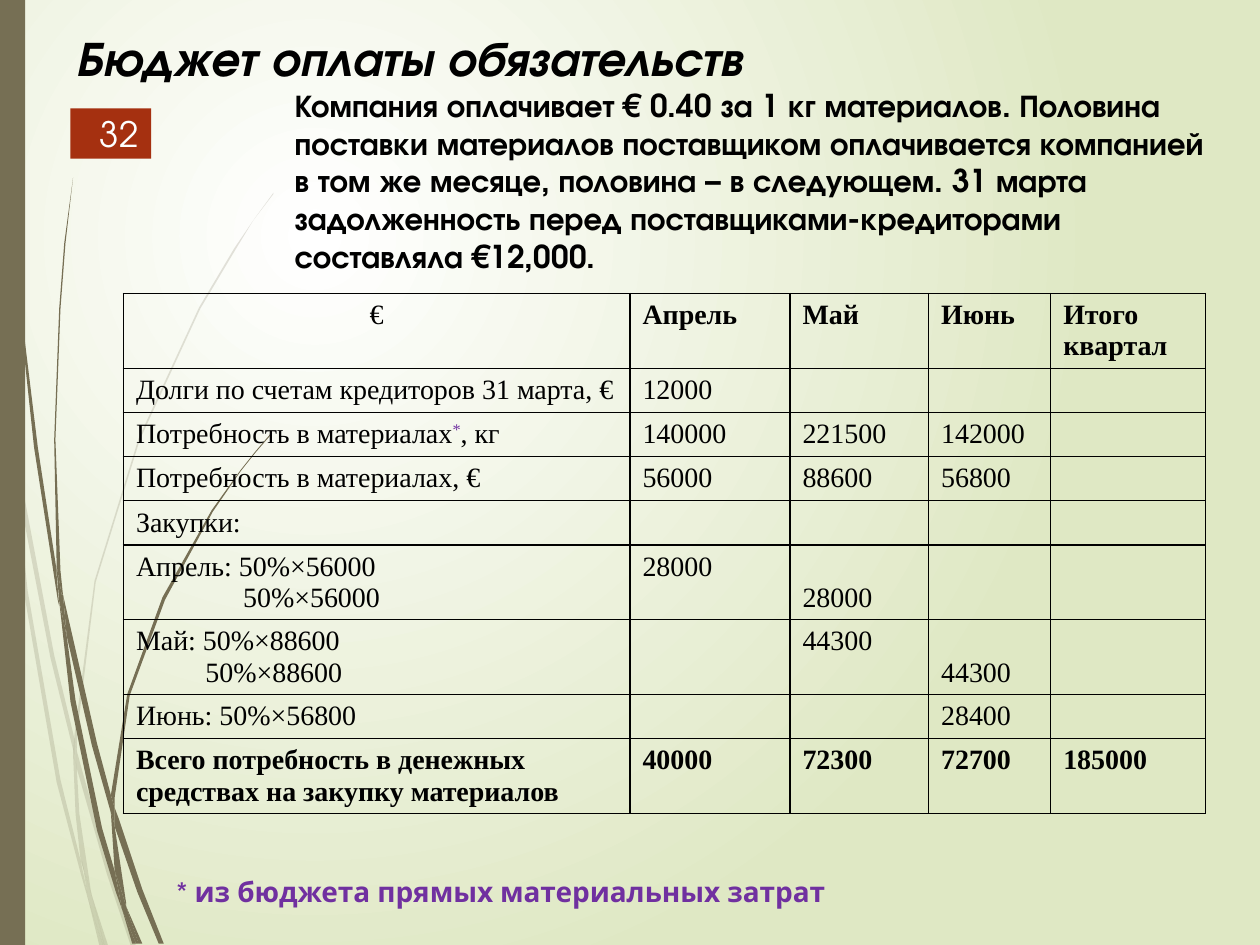
"""Build the slide with the budget of payments to suppliers."""
from lxml import etree
from pptx import Presentation
from pptx.dml.color import RGBColor
from pptx.enum.shapes import MSO_SHAPE
from pptx.enum.text import MSO_ANCHOR, PP_ALIGN
from pptx.oxml.ns import qn
from pptx.util import Inches, Pt

RECTANGLE = MSO_SHAPE.RECTANGLE
TOP, MIDDLE, BOTTOM = MSO_ANCHOR.TOP, MSO_ANCHOR.MIDDLE, MSO_ANCHOR.BOTTOM
LEFT, CENTER, RIGHT = PP_ALIGN.LEFT, PP_ALIGN.CENTER, PP_ALIGN.RIGHT
COLORS = {"white": "FFFFFF", "green": "DFE8C4", "olive": "766F54", "rust": "A53010",
          "number": "FEFFFF", "black": "000000", "purple": "7030A0"}
HEADING_FONT, TABLE_FONT, NOTE_FONT = "TeX Gyre Adventor", "Times New Roman", "Karla"

FAINT_STRANDS = [
    [(8, 350), (6, 322), (0, 282), (0, 299), (7, 344)],
    [(40, 522), (59, 599), (59, 586), (43, 520), (10, 345), (12, 376)],
    [(64, 607), (61, 596), (61, 610), (85, 694), (104, 751), (108, 751), (88, 692)],
    [(83, 751), (86, 751), (73, 711)],
    [(64, 683), (48, 619), (22, 469), (12, 376), (8, 350), (19, 470), (45, 621),
     (64, 693), (70, 714), (69, 707)],
    [(58, 599), (60, 646), (64, 683), (67, 692), (73, 711), (72, 706), (63, 646),
     (61, 610), (61, 608)],
    [(61, 584), (76, 462), (111, 349), (159, 245), (187, 198), (201, 175), (217, 154),
     (217, 153), (201, 175), (186, 197), (158, 244), (110, 348), (75, 461), (59, 584),
     (59, 586), (61, 596)],
    [(70, 714), (79, 751), (82, 751)],
    [(61, 608), (61, 610), (61, 596), (59, 586), (58, 599)],
    [(67, 692), (65, 683), (69, 707), (70, 714), (82, 751), (83, 751), (73, 711)],
]
SOLID_STRANDS = [
    [(5, 110), (14, 233), (27, 355), (46, 477), (47, 481), (45, 457), (45, 453),
     (30, 355), (15, 232), (6, 109), (4, 48), (3, 0), (2, 0), (3, 48)],
    [(73, 592), (88, 645), (88, 633), (88, 631), (77, 590), (50, 472), (53, 505)],
    [(94, 649), (91, 641), (91, 656), (109, 708), (126, 749), (130, 749), (113, 706)],
    [(91, 691), (81, 657), (60, 556), (53, 505), (47, 477), (56, 557), (77, 659),
     (92, 708), (97, 722), (96, 717)],
    [(50, 472), (48, 453), (44, 349), (48, 245), (52, 193), (58, 141), (51, 193),
     (47, 245), (43, 349), (45, 449), (49, 472)],
    [(110, 749), (113, 749), (100, 719)],
    [(47, 477), (53, 505), (50, 472), (49, 472), (45, 449), (45, 453)],
    [(91, 633), (103, 552), (131, 476), (169, 406), (191, 374), (203, 359), (216, 344),
     (215, 344), (203, 358), (191, 373), (168, 405), (129, 474), (101, 551), (88, 631),
     (91, 641)],
    [(97, 722), (105, 749), (108, 749)],
    [(88, 645), (91, 691), (96, 706), (100, 719), (100, 716), (91, 656), (90, 651)],
    [(88, 645), (90, 651), (91, 656), (91, 641), (88, 631), (88, 633)],
    [(96, 706), (91, 691), (96, 717), (97, 722), (108, 749), (110, 749), (100, 719)],
]
COLUMN_WIDTHS = [4.02, 1.27, 1.1, 0.97, 1.23]
ONE_LINE, TWO_LINES = 0.35, 0.59
BUDGET = [
    ["€", "Апрель", "Май", "Июнь", "Итого квартал"],
    ["Долги по счетам кредиторов 31 марта, €", "12000", "", "", ""],
    ["Потребность в материалах*, кг", "140000", "221500", "142000", ""],
    ["Потребность в материалах, €", "56000", "88600", "56800", ""],
    ["Закупки:", "", "", "", ""],
    ["Апрель: 50%×56000\n50%×56000", "28000", "28000", "", ""],
    ["Май: 50%×88600\n50%×88600", "", "44300", "44300", ""],
    ["Июнь: 50%×56800", "", "", "28400", ""],
    ["Всего потребность в денежных средствах на закупку материалов",
     "40000", "72300", "72700", "185000"],
]
TALL_ROWS = {0, 5, 6, 8}
BOLD_ROWS = {0, 8}
SECOND_LINE_INDENTS = {5: 0.85, 6: 0.55}
SECOND_LINE_AMOUNTS = {(5, 2), (6, 3)}


def rgb(name):
    """Return the named colour."""
    return RGBColor.from_string(COLORS[name])


class SlideBuilder:
    """Hold the style and the current page and add elements to it."""

    def __init__(self, page):
        self.page = page

    def background(self):
        """Fill the page with a radial gradient."""
        fill = self.page.background.fill
        fill.gradient()
        for stop, name, position in zip(fill.gradient_stops, ("white", "green"), (0, 1)):
            stop.color.rgb = rgb(name)
            stop.position = position
        gradient = self.page._element.find(".//" + qn("a:gradFill"))
        gradient.remove(gradient.find(qn("a:lin")))
        circle = etree.Element(qn("a:path"), path="circle")
        etree.SubElement(circle, qn("a:fillToRect"), l="50000", t="50000",
                         r="100000", b="100000")
        gradient.find(qn("a:gsLst")).addnext(circle)

    def paint(self, shape, color, opacity=100):
        """Give a shape a flat fill without line or shadow."""
        shape.shadow.inherit = False
        shape.fill.solid()
        shape.fill.fore_color.rgb = rgb(color)
        shape.line.fill.background()
        if opacity < 100:
            tint = shape._element.spPr.find(".//" + qn("a:srgbClr"))
            etree.SubElement(tint, qn("a:alpha"), val=str(opacity * 1000))

    def strand(self, points, opacity):
        """Draw a grass strand from points in hundredths of an inch."""
        builder = self.page.shapes.build_freeform(*points[0], scale=Inches(0.01))
        builder.add_line_segments(points[1:], close=True)
        self.paint(builder.convert_to_shape(), "olive", opacity)

    def rectangle(self, area, color):
        """Add a filled rectangle."""
        box = self.page.shapes.add_shape(RECTANGLE, *map(Inches, area))
        self.paint(box, color)
        return box

    def style(self, para, size, font, color="black", bold=False, italic=False, align=LEFT):
        """Set the font and alignment of a paragraph."""
        para.alignment = align
        para.font.size, para.font.name = Pt(size), font
        para.font.bold, para.font.italic = bold, italic
        para.font.color.rgb = rgb(color)

    def label(self, box, text, size, font, anchor=MIDDLE, wrap=True, **look):
        """Put one styled paragraph into a shape."""
        frame = box.text_frame
        frame.word_wrap, frame.vertical_anchor = wrap, anchor
        frame.text = text
        self.style(frame.paragraphs[0], size, font, **look)

    def title(self, area, text):
        """Place and fill the title placeholder."""
        box = self.page.shapes.title
        box.left, box.top, box.width, box.height = map(Inches, area)
        self.label(box, text, 28, HEADING_FONT, anchor=TOP, bold=True, italic=True)

    def text(self, area, text, size, font, **look):
        """Add a text box."""
        box = self.page.shapes.add_textbox(*map(Inches, area))
        self.label(box, text, size, font, **look)

    def cell(self, cell, text, row, column):
        """Fill and outline one table cell."""
        cell.fill.background()
        properties = cell._tc.get_or_add_tcPr()
        for index, side in enumerate(("lnL", "lnR", "lnT", "lnB")):
            line = etree.Element(qn("a:" + side), w=str(Pt(1)))
            solid = etree.SubElement(line, qn("a:solidFill"))
            etree.SubElement(solid, qn("a:srgbClr"), val=COLORS["black"])
            properties.insert(index, line)
        cell.vertical_anchor = BOTTOM if (row, column) in SECOND_LINE_AMOUNTS else TOP
        cell.text = text
        frame = cell.text_frame
        if "*" in text:
            before, after = text.split("*")
            para = frame.paragraphs[0]
            para.runs[0].text = before
            star, rest = para.add_run(), para.add_run()
            star.text, rest.text = "*", after
            star.font.color.rgb = rgb("purple")
            star._r.get_or_add_rPr().set("baseline", "30000")
        for para in frame.paragraphs:
            bold = row in BOLD_ROWS and text != "€"
            self.style(para, 16, TABLE_FONT, bold=bold, align=CENTER if text == "€" else LEFT)
            if not text:
                para._p.get_or_add_endParaRPr().set("sz", "1600")
        for para in frame.paragraphs[1:]:
            para._p.get_or_add_pPr().set("marL", str(Inches(SECOND_LINE_INDENTS[row])))

    def table(self, left, top):
        """Add the budget table."""
        heights = [TWO_LINES if row in TALL_ROWS else ONE_LINE for row in range(len(BUDGET))]
        table = self.page.shapes.add_table(
            len(BUDGET), len(COLUMN_WIDTHS), Inches(left), Inches(top),
            Inches(sum(COLUMN_WIDTHS)), Inches(sum(heights))).table
        table.first_row = table.horz_banding = False
        for column, width in zip(table.columns, COLUMN_WIDTHS):
            column.width = Inches(width)
        for row, values in enumerate(BUDGET):
            table.rows[row].height = Inches(heights[row])
            for column, text in enumerate(values):
                self.cell(table.cell(row, column), text, row, column)


def main():
    """Build and save the deck."""
    deck = Presentation()
    deck.slide_width, deck.slide_height = Inches(10), Inches(7.5)
    slide = SlideBuilder(deck.slides.add_slide(deck.slide_layouts[5]))
    slide.background()
    for strands, opacity in ((FAINT_STRANDS, 20), (SOLID_STRANDS, 100)):
        for points in strands:
            slide.strand(points, opacity)
    slide.rectangle((0, 0, 0.2, 7.5), "olive")
    slide.title((0.5, 0.17, 9, 0.67), "Бюджет оплаты обязательств")
    slide.table(0.98, 2.33)
    number = slide.rectangle((0.56, 0.86, 0.64, 0.4), "rust")
    slide.label(number, "32", 20, HEADING_FONT, color="number", align=RIGHT)
    slide.text((2.24, 0.62, 7.49, 1.62),
               "Компания оплачивает € 0.40 за 1 кг материалов. Половина поставки материалов "
               "поставщиком оплачивается компанией в том же месяце, половина – в следующем. "
               "31 марта задолженность перед поставщиками-кредиторами составляла €12,000.",
               18, HEADING_FONT, bold=True)
    slide.text((1.3, 6.89, 5.43, 0.37), "* из бюджета прямых материальных затрат",
               16, NOTE_FONT, wrap=False, color="purple", bold=True)
    deck.save("out.pptx")


if __name__ == "__main__":
    main()
